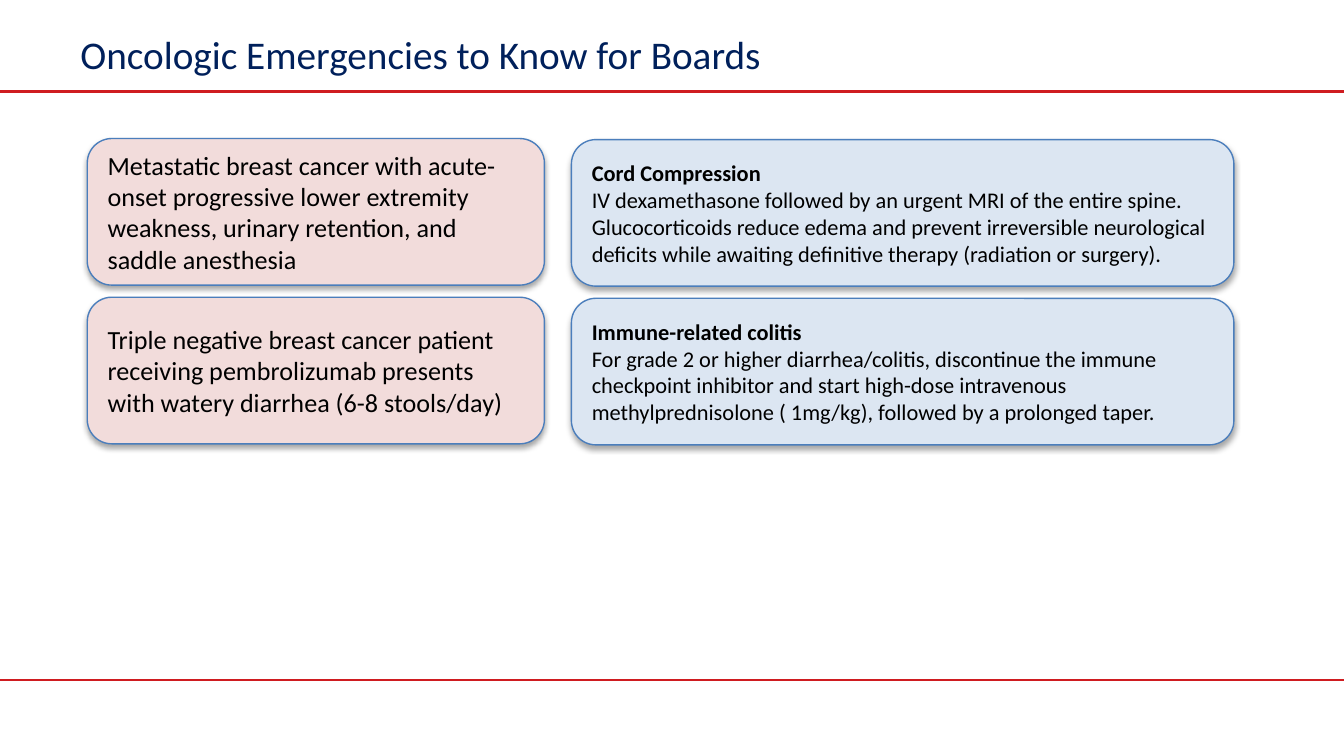
from dataclasses import dataclass

from lxml import etree
from pptx import Presentation
from pptx import util as u
from pptx.dml.color import RGBColor
from pptx.enum import shapes, text
from pptx.oxml.ns import qn

FONT = "Calibri"
COLORS = {
    "title": "00205B",
    "rule": "CF1C20",
    "scenario": "F2DCDB",
    "answer": "DCE6F2",
    "outline": "4B7EBC",
    "text": "000000",
}
SLIDE_W, SLIDE_H = 25.4, 14.29
CARD_H, ROW_PITCH = 2.77, 3.0


@dataclass(frozen=True)
class Column:
    left: float
    top: float
    width: float
    fill: str
    size: int


@dataclass(frozen=True)
class Emergency:
    scenario: str
    diagnosis: str
    management: str


SCENARIOS = Column(1.65, 2.62, 8.64, "scenario", 14)
ANSWERS = Column(10.8, 2.64, 12.52, "answer", 12)

EMERGENCIES = [
    Emergency(
        "Metastatic breast cancer with acute-onset progressive lower extremity "
        "weakness, urinary retention, and saddle anesthesia",
        "Cord Compression",
        "IV dexamethasone followed by an urgent MRI of the entire spine. "
        "Glucocorticoids reduce edema and prevent irreversible neurological "
        "deficits while awaiting definitive therapy (radiation or surgery).",
    ),
    Emergency(
        "Triple negative breast cancer patient receiving pembrolizumab presents "
        "with watery diarrhea (6-8 stools/day)",
        "Immune-related colitis",
        "For grade 2 or higher diarrhea/colitis, discontinue the immune "
        "checkpoint inhibitor and start high-dose intravenous "
        "methylprednisolone ( 1mg/kg), followed by a prolonged taper.",
    ),
]


def rgb(name: str) -> RGBColor:
    return RGBColor.from_string(COLORS[name])


def set_font(p, size: float, color: str, bold: bool = False) -> None:
    p.font.name = FONT
    p.font.size = u.Pt(size)
    p.font.bold = bold
    p.font.color.rgb = rgb(color)


def add_rule(s, y: float, weight: float) -> None:
    """Draw a red line across the full slide width."""
    line = s.shapes.add_connector(
        shapes.MSO_CONNECTOR.STRAIGHT, 0, u.Cm(y), u.Cm(SLIDE_W), u.Cm(y))
    line.line.color.rgb = rgb("rule")
    line.line.width = u.Pt(weight)
    etree.SubElement(line._element.spPr, qn("a:effectLst"))


def add_title(s, title: str) -> None:
    tf = s.shapes.add_textbox(
        u.Cm(1.27), u.Cm(0.58), u.Cm(22.86), u.Cm(0.89)).text_frame
    tf.word_wrap = True
    tf.vertical_anchor = text.MSO_ANCHOR.MIDDLE
    p = tf.paragraphs[0]
    p.text = title
    set_font(p, 21, "title")


def add_drop_shadow(sp) -> None:
    sp.shadow.inherit = False
    effects = sp._element.spPr.find(qn("a:effectLst"))
    shadow = etree.SubElement(
        effects, qn("a:outerShdw"), blurRad=str(u.Pt(3.1)),
        dist=str(u.Pt(1.8)), dir="5400000", rotWithShape="0")
    color = etree.SubElement(shadow, qn("a:srgbClr"), val="000000")
    etree.SubElement(color, qn("a:alpha"), val="35000")


def add_card(s, column: Column, row: int, body: str, heading: str = "") -> None:
    sp = s.shapes.add_shape(
        shapes.MSO_SHAPE.ROUNDED_RECTANGLE, u.Cm(column.left),
        u.Cm(column.top + row * ROW_PITCH), u.Cm(column.width), u.Cm(CARD_H))
    sp.fill.solid()
    sp.fill.fore_color.rgb = rgb(column.fill)
    sp.line.color.rgb = rgb("outline")
    sp.line.width = u.Pt(0.75)
    add_drop_shadow(sp)

    tf = sp.text_frame
    tf.word_wrap = True
    tf.vertical_anchor = text.MSO_ANCHOR.MIDDLE
    lines = [heading, body] if heading else [body]
    tf.text = "\n".join(lines)
    for p, line in zip(tf.paragraphs, lines):
        p.alignment = text.PP_ALIGN.LEFT
        set_font(p, column.size, "text", bold=line == heading)


def main() -> None:
    prs = Presentation()
    prs.slide_width, prs.slide_height = u.Cm(SLIDE_W), u.Cm(SLIDE_H)
    s = prs.slides.add_slide(prs.slide_layouts[6])
    add_rule(s, 12.85, 1)
    add_rule(s, 1.73, 1.25)
    add_title(s, "Oncologic Emergencies to Know for Boards")
    for row, emergency in enumerate(EMERGENCIES):
        add_card(s, SCENARIOS, row, emergency.scenario)
        add_card(s, ANSWERS, row, emergency.management, emergency.diagnosis)
    prs.save("out.pptx")


if __name__ == "__main__":
    main()
